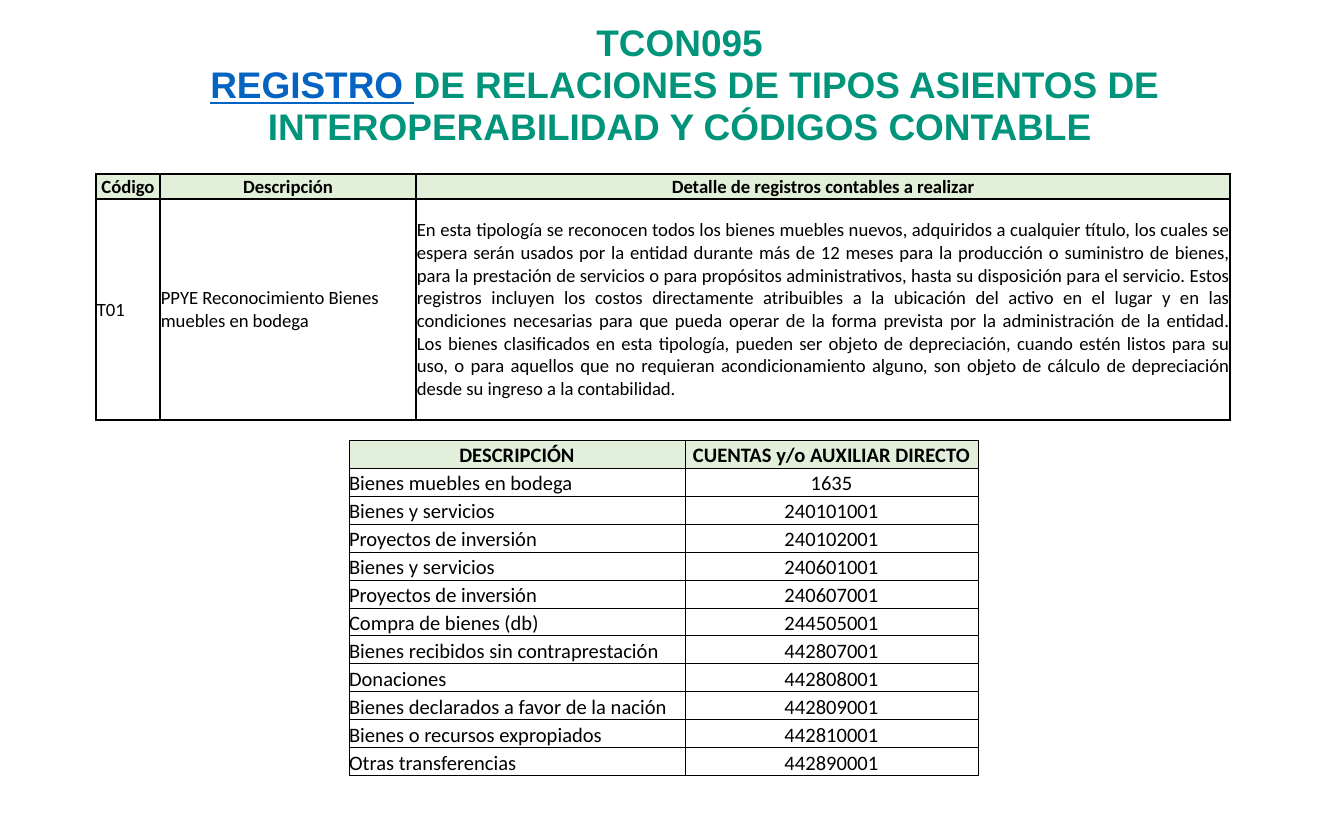
from lxml.etree import SubElement
from pptx import Presentation
from pptx.dml.color import RGBColor
from pptx.enum.text import MSO_ANCHOR, PP_ALIGN
from pptx.oxml.ns import qn
from pptx.util import Pt

PX = 914400 / 134.4
GREEN, LINK, BLACK = "00947A", "0563C1", "000000"
LEFT, CENTER, JUSTIFY = PP_ALIGN.LEFT, PP_ALIGN.CENTER, PP_ALIGN.JUSTIFY

TYPE_ROWS = [
    ("Código", "Descripción", "Detalle de registros contables a realizar"),
    ("T01", "PPYE Reconocimiento Bienes muebles en bodega",
     "En esta tipología se reconocen todos los bienes muebles nuevos, adquiridos a "
     "cualquier título, los cuales se espera serán usados por la entidad durante más "
     "de 12 meses para la producción o suministro de bienes, para la prestación de "
     "servicios o para propósitos administrativos, hasta su disposición para el "
     "servicio. Estos registros incluyen los costos directamente atribuibles a la "
     "ubicación del activo en el lugar y en las condiciones necesarias para que pueda "
     "operar de la forma prevista por la administración de la entidad.\v"
     "Los bienes clasificados en esta tipología, pueden ser objeto de depreciación, "
     "cuando estén listos para su uso, o para aquellos que no requieran "
     "acondicionamiento alguno, son objeto de cálculo de depreciación desde su "
     "ingreso a la contabilidad."),
]

ACCOUNT_ROWS = [
    ("DESCRIPCIÓN", "CUENTAS y/o AUXILIAR DIRECTO"),
    ("Bienes muebles en bodega", "1635"),
    ("Bienes y servicios", "240101001"),
    ("Proyectos de inversión", "240102001"),
    ("Bienes y servicios", "240601001"),
    ("Proyectos de inversión", "240607001"),
    ("Compra de bienes (db)", "244505001"),
    ("Bienes recibidos sin contraprestación", "442807001"),
    ("Donaciones", "442808001"),
    ("Bienes declarados a favor de la nación", "442809001"),
    ("Bienes o recursos expropiados", "442810001"),
    ("Otras transferencias", "442890001"),
]


def px(n):
    return round(n * PX)


def rgb(color):
    return RGBColor.from_string(color)


def add_title(s):
    tf = s.shapes.add_textbox(px(15), px(35), px(1329), px(144)).text_frame
    tf.word_wrap = True
    tf.vertical_anchor = MSO_ANCHOR.MIDDLE
    tf.margin_top, tf.margin_bottom = 0, px(42)
    p = tf.paragraphs[0]
    p.alignment, p.line_spacing = CENTER, 0.94
    p.font.name, p.font.size, p.font.bold = "Arial", Pt(19.8), True
    p.font.color.rgb = rgb(GREEN)

    def add_run(text, color=GREEN, underline=False):
        r = p.add_run()
        r.text = text
        r.font.name, r.font.size, r.font.bold = "Arial", Pt(19.8), True
        r.font.color.rgb = rgb(color)
        r.font.underline = underline

    add_run("TCON095")
    p.add_line_break()
    add_run(" ")
    add_run("REGISTRO ", LINK, True)
    add_run("DE RELACIONES DE TIPOS ASIENTOS DE INTEROPERABILIDAD Y CÓDIGOS CONTABLE")


def set_borders(cell, width):
    tc_pr = cell._tc.get_or_add_tcPr()
    for side in ("a:lnL", "a:lnR", "a:lnT", "a:lnB"):
        ln = SubElement(tc_pr, qn(side), w=str(Pt(width)))
        SubElement(SubElement(ln, qn("a:solidFill")), qn("a:srgbClr"), val=BLACK)


def fill_cell(cell, text, align, size, header_fill, anchor, inset, border):
    cell.vertical_anchor = anchor
    cell.margin_left = cell.margin_right = cell.margin_top = px(inset)
    cell.margin_bottom = 0
    set_borders(cell, border)
    if header_fill:
        cell.fill.solid()
        cell.fill.fore_color.rgb = rgb(header_fill)
    else:
        cell.fill.background()
    p = cell.text_frame.paragraphs[0]
    p.text = text
    p.alignment = align
    p.font.name, p.font.size, p.font.bold = "Calibri", Pt(size), bool(header_fill)
    p.font.color.rgb = rgb(BLACK)


def add_grid(s, x, y, widths, heights, rows, aligns, size, header_fill, anchor, inset, border):
    frame = s.shapes.add_table(len(rows), len(widths), px(x), px(y),
                               px(sum(widths)), px(sum(heights)))
    table = frame.table
    table.first_row = table.horz_banding = False
    for column, width in zip(table.columns, widths):
        column.width = px(width)
    for i, (row, height) in enumerate(zip(rows, heights)):
        table.rows[i].height = px(height)
        for j, text in enumerate(row):
            fill_cell(table.cell(i, j), text, aligns[j] if i else CENTER, size,
                      None if i else header_fill, anchor, inset, border)


def main():
    prs = Presentation()
    prs.slide_width, prs.slide_height = px(1344), px(840)
    s = prs.slides.add_slide(prs.slide_layouts[6])
    add_title(s)
    # Entry type and its explanation
    add_grid(s, 96, 174, [64, 256, 814], [25, 221], TYPE_ROWS, [LEFT, LEFT, JUSTIFY],
             10, "E2EFD9", MSO_ANCHOR.MIDDLE, 1, 1)
    # Accounts
    add_grid(s, 349, 440, [336, 293], [28] * len(ACCOUNT_ROWS), ACCOUNT_ROWS,
             [LEFT, CENTER], 11, "E2EFDA", MSO_ANCHOR.BOTTOM, 0, 0.5)
    prs.save("out.pptx")


if __name__ == "__main__":
    main()
